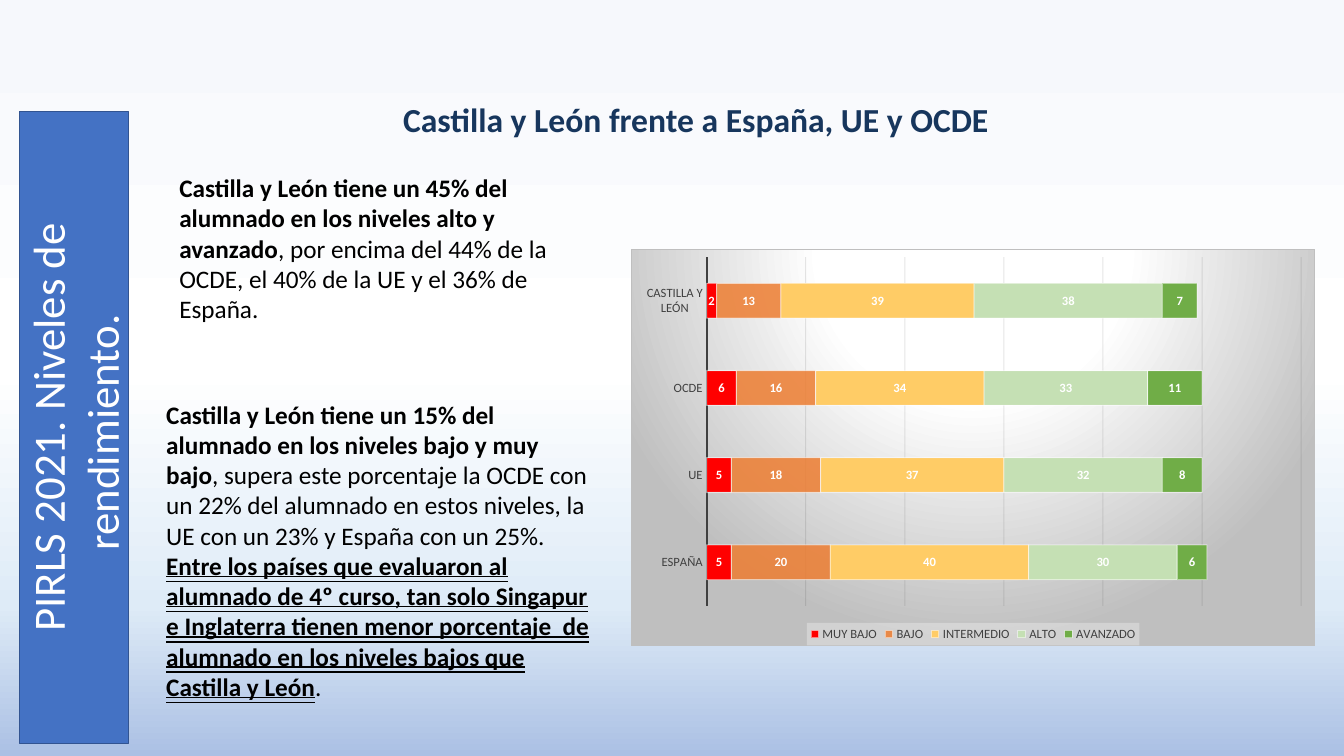
from lxml.etree import SubElement
from pptx import Presentation
from pptx.chart.data import CategoryChartData
from pptx.dml.color import RGBColor
from pptx.enum.chart import XL_CHART_TYPE, XL_LABEL_POSITION, XL_LEGEND_POSITION, XL_TICK_MARK
from pptx.enum.shapes import MSO_SHAPE
from pptx.enum.text import MSO_ANCHOR, MSO_AUTO_SIZE, MSO_UNDERLINE, PP_ALIGN
from pptx.oxml import parse_xml
from pptx.oxml.ns import nsdecls, qn
from pptx.util import Cm, Pt

# Content: each run is (text, style)
SIDEBAR = [("PIRLS 2021. Niveles de rendimiento. ", "plain")]
TITLE = [("Castilla y León frente a España, UE y OCDE", "bold")]
HIGH_LEVELS = [
    ("Castilla y León tiene un 45% del alumnado en los niveles alto y avanzado", "bold"),
    (", por encima del 44% de la OCDE, el 40% de la UE y el 36% de España.", "plain"),
]
LOW_LEVELS = [
    ("Castilla y León tiene un 15% del alumnado en los niveles bajo y muy bajo", "bold"),
    (", supera este porcentaje la OCDE con un 22% del alumnado en estos niveles, "
     "la UE con un 23% y España con un 25%. ", "plain"),
    ("Entre los países que evaluaron al alumnado de 4º curso, tan solo Singapur e "
     "Inglaterra tienen menor porcentaje  de alumnado en los niveles bajos que "
     "Castilla y León", "underlined"),
    (".", "plain"),
]
REGIONS = ["ESPAÑA", "UE", "OCDE", "CASTILLA Y LEÓN"]
LEVELS = [  # name, values, colour, opacity in percent
    ("MUY BAJO", (5, 5, 6, 2), "FF0000", 100),
    ("BAJO", (20, 18, 16, 13), "ED7D31", 85),
    ("INTERMEDIO", (40, 37, 34, 39), "FFCC66", 100),
    ("ALTO", (30, 32, 33, 38), "C5E0B4", 100),
    ("AVANZADO", (6, 8, 11, 7), "70AD47", 100),
]

# Positions in cm: left, top, width, height
SIDEBAR_AT = (-6.1, 9.4, 15.93, 2.74)
TITLE_AT = (9.91, 2.21, 17.78, 1.37)
HIGH_AT = (4.27, 4.22, 9.86, 4.11)
LOW_AT = (3.94, 9.93, 11.25, 7.95)
CHART_AT = (15.9, 6.27, 17.25, 10.01)
PLOT_AT = {"x": 0.11, "y": 0.02, "w": 0.87, "h": 0.88}  # share of the chart


class Theme:
    font = "Calibri"
    black, white = "000000", "FFFFFF"
    blue, blue_line, navy = "4472C4", "325491", "17365D"
    dark, grid, gray, legend = "404040", "0D0D0D", "BFBFBF", "F2F2F2"
    sky = [(0, "F6F8FC"), (49, "FFFFFF"), (80, "DEEBF7"), (100, "ABC0E4")]
    glow = [(0, "FFFFFF"), (39, "FFFFFF"), (100, "BFBFBF")]
    sidebar, title, body, label = 32, 24, 18, 9


def rgb(value):
    return RGBColor.from_string(value)


def place(at):
    return [Cm(length) for length in at]


def gradient(stops, direction):
    marks = "".join(f'<a:gs pos="{pos * 1000}"><a:srgbClr val="{color}"/></a:gs>'
                    for pos, color in stops)
    return f"<a:gradFill><a:gsLst>{marks}</a:gsLst>{direction}</a:gradFill>"


def fade(parent, percent):
    for color in parent.iter(qn("a:srgbClr")):
        SubElement(color, qn("a:alpha")).set("val", str(percent * 1000))


def style_font(font, size, color, bold=False):
    font.name, font.size, font.bold = Theme.font, Pt(size), bold
    font.color.rgb = rgb(color)


def write(shape, runs, size, color=Theme.black, align=PP_ALIGN.LEFT,
          anchor=MSO_ANCHOR.TOP, spacing=None, fit=MSO_AUTO_SIZE.SHAPE_TO_FIT_TEXT):
    frame = shape.text_frame
    frame.word_wrap, frame.auto_size, frame.vertical_anchor = True, fit, anchor
    para = frame.paragraphs[0]
    para.alignment, para.line_spacing = align, spacing
    for text, style in runs:
        span = para.add_run()
        span.text = text
        style_font(span.font, size, color, bold=style != "plain")
        if style == "underlined":
            span.font.underline = MSO_UNDERLINE.DOUBLE_LINE


deck = Presentation()
deck.slide_width, deck.slide_height = Cm(33.87), Cm(19.05)
slide = deck.slides.add_slide(deck.slide_layouts[6])

# Background
sky = gradient(Theme.sky, '<a:lin ang="5400000" scaled="0"/>')
slide.element.cSld.insert(0, parse_xml(
    f'<p:bg {nsdecls("p", "a")}><p:bgPr>{sky}<a:effectLst/></p:bgPr></p:bg>'))

# Sidebar
sidebar = slide.shapes.add_shape(MSO_SHAPE.RECTANGLE, *place(SIDEBAR_AT))
sidebar.rotation = 270
sidebar.shadow.inherit = False
sidebar.fill.solid()
sidebar.fill.fore_color.rgb = rgb(Theme.blue)
sidebar.line.color.rgb = rgb(Theme.blue_line)
sidebar.line.width = Pt(1)
write(sidebar, SIDEBAR, Theme.sidebar, color=Theme.white, align=PP_ALIGN.CENTER,
      anchor=MSO_ANCHOR.MIDDLE, fit=MSO_AUTO_SIZE.NONE)

# Title
write(slide.shapes.add_textbox(*place(TITLE_AT)), TITLE, Theme.title,
      color=Theme.navy, align=PP_ALIGN.JUSTIFY, spacing=1.15)

# Chart
chart_data = CategoryChartData(number_format="0")
chart_data.categories = REGIONS
for name, values, *_ in LEVELS:
    chart_data.add_series(name, values)
chart = slide.shapes.add_chart(
    XL_CHART_TYPE.BAR_STACKED, *place(CHART_AT), chart_data).chart
chart.has_title = False
style_font(chart.font, 10, Theme.black)
plot = chart.plots[0]
plot.gap_width, plot.overlap, plot.vary_by_categories = 150, 100, False

# Chart series
for series, (_, _, color, opacity) in zip(plot.series, LEVELS):
    series.format.fill.solid()
    series.format.fill.fore_color.rgb = rgb(color)
    series.format.line.color.rgb = rgb(Theme.white)
    series.format.line.width = Pt(0.75)
    look = series._element.find(qn("c:spPr"))
    if opacity < 100:
        fade(look.find(qn("a:solidFill")), opacity)
    fade(look.find(qn("a:ln")), 50)
    labels = series.data_labels
    labels.show_value, labels.position = True, XL_LABEL_POSITION.CENTER
    style_font(labels.font, Theme.label, Theme.white, bold=True)

# Chart axes
regions, shares = chart.category_axis, chart.value_axis
regions.major_tick_mark = regions.minor_tick_mark = XL_TICK_MARK.NONE
regions.format.line.color.rgb = rgb(Theme.dark)
regions.format.line.width = Pt(1.5)
style_font(regions.tick_labels.font, Theme.label, Theme.dark)
shares.visible = False
shares.minimum_scale, shares.maximum_scale, shares.major_unit = 0, 120, 20
shares.has_major_gridlines = True
shares.major_gridlines.format.line.color.rgb = rgb(Theme.grid)
shares.major_gridlines.format.line.width = Pt(0.75)
fade(chart.element.find(".//" + qn("c:majorGridlines")), 10)

# Chart legend
chart.has_legend = True
chart.legend.position, chart.legend.include_in_layout = XL_LEGEND_POSITION.BOTTOM, False
style_font(chart.legend.font, Theme.label, Theme.dark)
legend_look = parse_xml(
    f'<c:spPr {nsdecls("c", "a")}><a:solidFill><a:srgbClr val="{Theme.legend}"/>'
    '</a:solidFill><a:ln><a:noFill/></a:ln></c:spPr>')
fade(legend_look, 39)
chart.element.find(".//" + qn("c:legend")).find(qn("c:txPr")).addprevious(legend_look)

# Chart frame and plot position
glow = gradient(Theme.glow, '<a:path path="circle"><a:fillToRect l="50000" t="-80000" '
                            'r="50000" b="180000"/></a:path>')
chart.element.find(qn("c:chart")).addnext(parse_xml(
    f'<c:spPr {nsdecls("c", "a")}>{glow}<a:ln w="9525"><a:solidFill>'
    f'<a:srgbClr val="{Theme.gray}"/></a:solidFill></a:ln></c:spPr>'))
plot_area = chart.element.find(".//" + qn("c:plotArea"))
for layout in plot_area.findall(qn("c:layout")):
    plot_area.remove(layout)
sides = "".join(f'<c:{side} val="{share}"/>' for side, share in PLOT_AT.items())
plot_area.insert(0, parse_xml(
    f'<c:layout {nsdecls("c")}><c:manualLayout><c:layoutTarget val="inner"/>'
    f'<c:xMode val="edge"/><c:yMode val="edge"/>{sides}</c:manualLayout></c:layout>'))

# Comments beside the chart
for at, runs in ((HIGH_AT, HIGH_LEVELS), (LOW_AT, LOW_LEVELS)):
    write(slide.shapes.add_textbox(*place(at)), runs, Theme.body)

deck.save("out.pptx")
